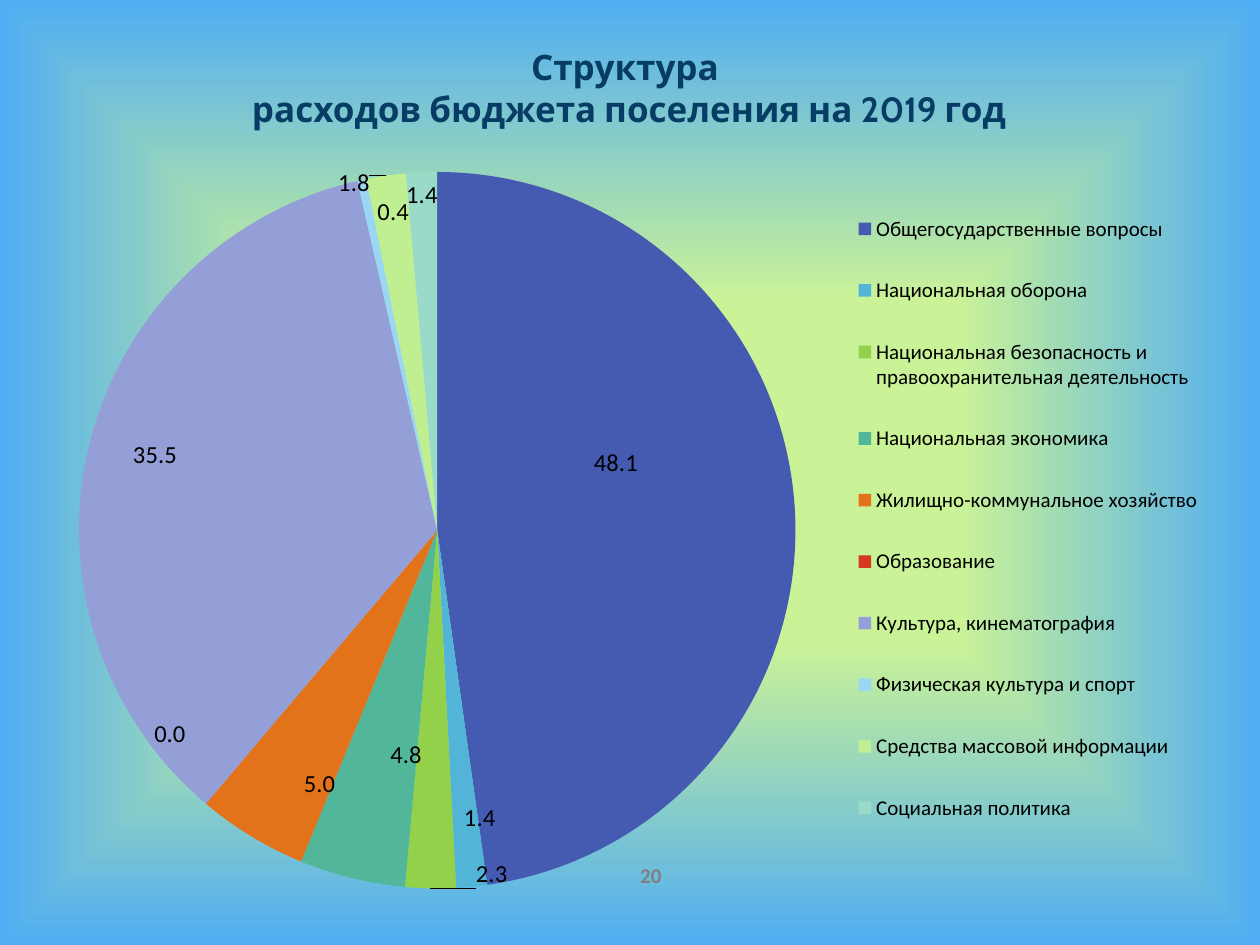
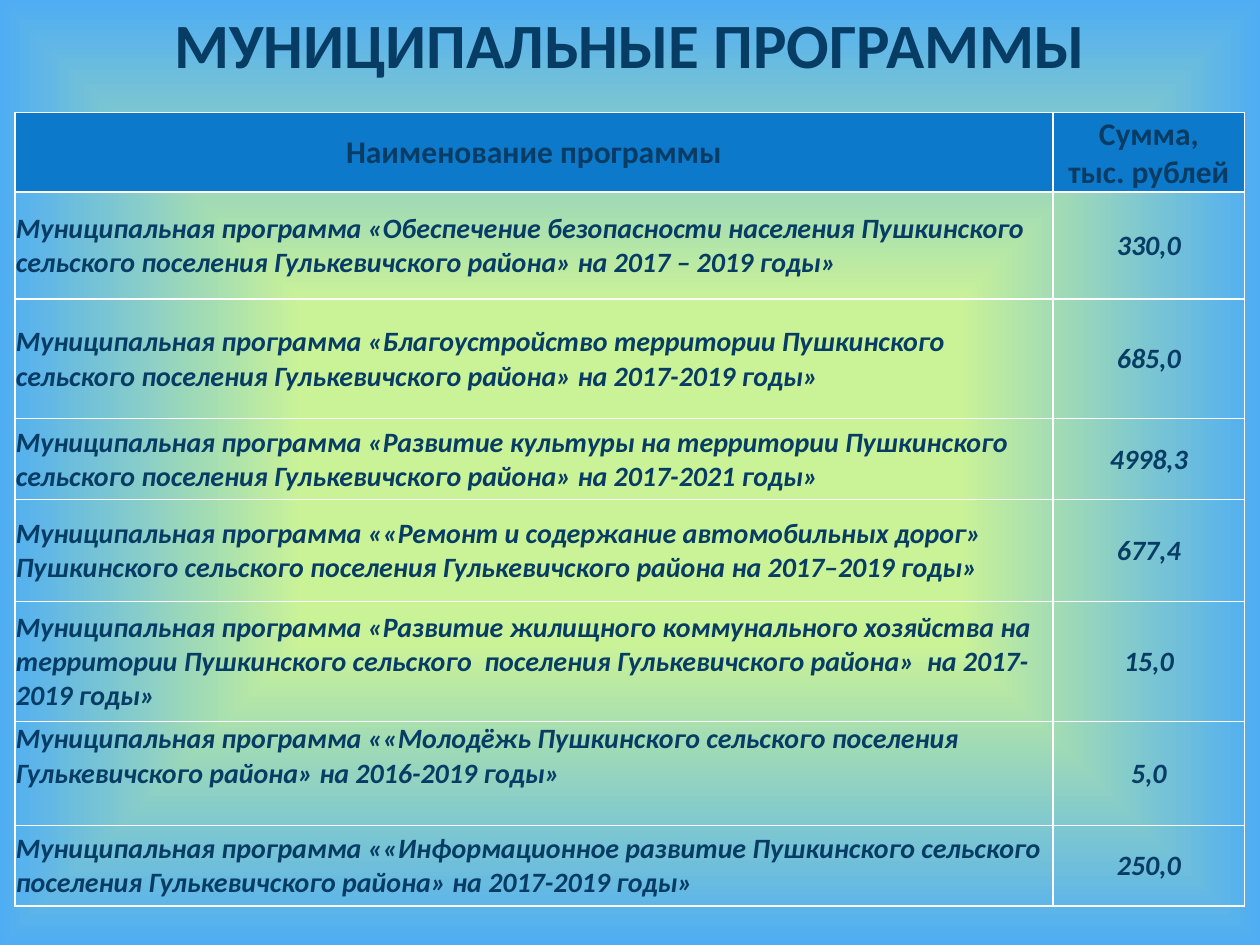
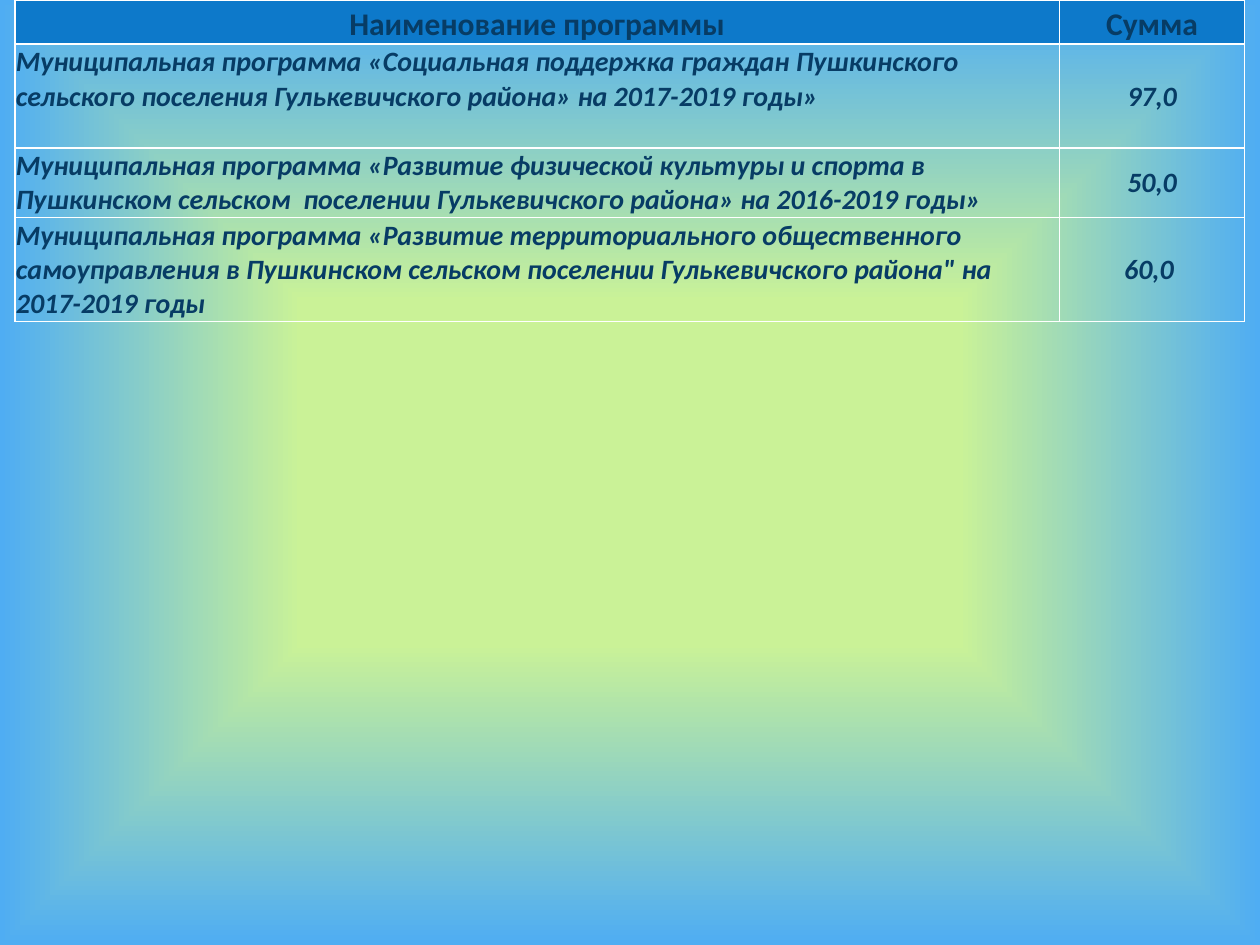
import pptx
import pptx.chart.data
import pptx.dml.color
import pptx.enum.chart
import pptx.enum.text
import pptx.oxml
import pptx.oxml.ns
import pptx.util
from lxml import etree

Cm = pptx.util.Cm
Pt = pptx.util.Pt
RGBColor = pptx.dml.color.RGBColor
ALIGN = pptx.enum.text.PP_ALIGN
ANCHOR = pptx.enum.text.MSO_ANCHOR
LABEL = pptx.enum.chart.XL_LABEL_POSITION

NAVY = RGBColor(0x07, 0x3C, 0x65)
HEADER_BLUE = RGBColor(0x0D, 0x79, 0xCA)
GREY = RGBColor(0x80, 0x80, 0x80)
BLACK = RGBColor(0, 0, 0)
LIME, SKY, WHITE = (RGBColor(0xCA, 0xF2, 0x97), RGBColor(0x4F, 0xAD, 0xF3),
                    RGBColor(0xFF, 0xFF, 0xFF))
BODY_FONT = "Calibri"
TITLE_FONT = "Cabin"
NS = pptx.oxml.ns.nsdecls("a")

GRADIENT = f"""<a:gradFill {NS} rotWithShape="1"><a:gsLst>
<a:gs pos="36000"><a:srgbClr val="{LIME}"/></a:gs>
<a:gs pos="100000"><a:srgbClr val="{SKY}"/></a:gs></a:gsLst>
<a:path path="shape"><a:fillToRect l="50000" t="50000" r="50000" b="50000"/></a:path>
</a:gradFill>"""


def write(frame, lines, size, color=NAVY, font=BODY_FONT, align=ALIGN.CENTER,
          bold=True, italic=False):
    """Fill a text frame, one paragraph per line."""
    for number, line in enumerate(lines):
        paragraph = frame.add_paragraph() if number else frame.paragraphs[0]
        paragraph.alignment = align
        run = paragraph.add_run()
        run.text = line
        run.font.size = Pt(size)
        run.font.name = font
        run.font.bold = bold
        run.font.italic = italic
        run.font.color.rgb = color


def add_programs(slide, top, widths, heights, header, programs, anchors):
    """Table of programmes; anchors maps (row, column) to a special anchor."""
    table = slide.shapes.add_table(len(heights), 2, Cm(0.3), Cm(top),
                                   Cm(sum(widths)), Cm(sum(heights))).table
    table.horz_banding = False
    for column, width in zip(table.columns, widths):
        column.width = Cm(width)
    for row, height in zip(table.rows, heights):
        row.height = Cm(height)
    for r, texts in enumerate([header] + programs):
        for c, text in enumerate(texts):
            cell = table.cell(r, c)
            inset = Cm(0.02) if r else 0
            cell.margin_left = cell.margin_right = cell.margin_top = inset
            cell.margin_bottom = 0
            cell.vertical_anchor = anchors.get((r, c), ANCHOR.MIDDLE)
            properties = cell._tc.get_or_add_tcPr()
            for side in ("lnL", "lnR", "lnT", "lnB"):
                properties.append(pptx.oxml.parse_xml(
                    f'<a:{side} {NS} w="12700"><a:solidFill>'
                    f'<a:srgbClr val="{WHITE}"/></a:solidFill></a:{side}>'))
            if r == 0:
                cell.fill.solid()
                cell.fill.fore_color.rgb = HEADER_BLUE
                write(cell.text_frame, text.split("\n"), 18)
            else:
                cell.fill.background()
                write(cell.text_frame, [text], 16, italic=True,
                      align=ALIGN.CENTER if c else ALIGN.LEFT)


# Presentation and shared background
prs = pptx.Presentation()
prs.slide_width, prs.slide_height = Cm(25.4), Cm(19.05)
master = prs.slide_master
master.background.fill.solid()
solid = master.element.xpath("p:cSld/p:bg/p:bgPr/a:solidFill")[0]
solid.getparent().replace(solid, pptx.oxml.parse_xml(GRADIENT))
title_only, blank = prs.slide_layouts[5], prs.slide_layouts[6]

# Slide 1: structure of spending
structure = prs.slides.add_slide(title_only)
heading = structure.shapes.title
heading.left, heading.top, heading.width, heading.height = Cm(-0.1), Cm(0.78), Cm(25.4), Cm(1.95)
heading.text_frame.vertical_anchor = ANCHOR.TOP
heading.text_frame.auto_size = pptx.enum.text.MSO_AUTO_SIZE.NONE
write(heading.text_frame, ["Структура", " расходов бюджета поселения на 2019 год"],
      20, font=TITLE_FONT)

page_number = structure.shapes.add_textbox(Cm(10.58), Cm(17.13), Cm(5.08), Cm(1.02)).text_frame
page_number.word_wrap = True
page_number.vertical_anchor = ANCHOR.MIDDLE
write(page_number, ["20"], 12, color=GREY)

# Section, share, slice colour, shift of the label as shares of the chart area
spending = [
    ("Общегосударственные вопросы", 48.1, "455BB1", (0, -0.07)),
    ("Национальная оборона", 1.4, "52B4D6", (0.02, -0.06)),
    ("Национальная безопасность и правоохранительная деятельность", 2.3, "93D14A", (0.05, 0.01)),
    ("Национальная экономика", 4.8, "52B79A", (0.03, -0.13)),
    ("Жилищно-коммунальное хозяйство", 5, "E2731B", (0.04, -0.04)),
    ("Образование", 0, "D63820", (0, 0)),
    ("Культура, кинематография", 35.5, "949ED7", (0.03, -0.01)),
    ("Физическая культура и спорт", 0.4, "99D7F5", (0.04, 0.07)),
    ("Средства массовой информации", 1.8, "C0EF92", (-0.04, -0.02)),
    ("Социальная политика", 1.4, "99DBC8", (0, 0)),
]
shares = pptx.chart.data.CategoryChartData(number_format="0.0")
shares.categories = [section for section, *_ in spending]
shares.add_series("Series 1", [share for _, share, *_ in spending])
pie = structure.shapes.add_chart(pptx.enum.chart.XL_CHART_TYPE.PIE, Cm(0.3), Cm(2.84),
                                 Cm(24.61), Cm(15.7), shares).chart
pie.has_title = False
pie.font.size = Pt(10)
pie.font.name = BODY_FONT
pie.font.color.rgb = BLACK
pie.has_legend = True
pie.legend.position = pptx.enum.chart.XL_LEGEND_POSITION.RIGHT
pie.legend.include_in_layout = False
pie.legend.font.size = Pt(12)
pie.legend.font.name = BODY_FONT
pie.legend.font.color.rgb = BLACK

pie.plots[0].vary_by_categories = True
slices = pie.plots[0].series[0]
labels = slices.data_labels
labels.show_value = True
labels.number_format = "0.0"
labels.number_format_is_linked = False
labels.position = LABEL.INSIDE_END
labels.font.size = Pt(14)
labels.font.color.rgb = BLACK
special_positions = {0: LABEL.CENTER, 7: LABEL.OUTSIDE_END}
C = pptx.oxml.ns.qn("c:layout")[:-len("layout")]
for index, (section, share, color, shift) in enumerate(spending):
    slice_fill = slices.points[index].format.fill
    slice_fill.solid()
    slice_fill.fore_color.rgb = RGBColor.from_string(color)
    if shift == (0, 0):
        continue
    label = slices.points[index].data_label
    label.font.size = Pt(14)
    label.font.color.rgb = BLACK
    label.position = special_positions.get(index, LABEL.INSIDE_END)
    layout = etree.Element(C + "layout")
    manual = etree.SubElement(layout, C + "manualLayout")
    for name, value in zip("xy", shift):
        etree.SubElement(manual, C + name, val=str(value))
    number = etree.Element(C + "numFmt", formatCode="0.0", sourceLinked="0")
    place = labels._element.xpath(f"c:dLbl/c:idx[@val='{index}']")[0]
    place.addnext(number)
    place.addnext(layout)

# Fixed places of the pie and its legend, as shares of the chart area
for tag, box in (("plotArea", (0.016, 0.04, 0.66, 0.92)), ("legend", (0.68, 0.05, 0.3, 0.87))):
    part = pie.element.xpath(f"c:chart/c:{tag}")[0]
    for old in part.findall(C + "layout"):
        part.remove(old)
    layout = etree.Element(C + "layout")
    manual = etree.SubElement(layout, C + "manualLayout")
    if tag == "plotArea":
        etree.SubElement(manual, C + "layoutTarget", val="inner")
        part.insert(0, layout)
    else:
        part.find(C + "legendPos").addnext(layout)
    for mode in ("xMode", "yMode"):
        etree.SubElement(manual, C + mode, val="edge")
    for name, value in zip("xywh", box):
        etree.SubElement(manual, C + name, val=str(value))

# Value of the empty slice
education_share = structure.shapes.add_textbox(Cm(2.6), Cm(14.3), Cm(1.65), Cm(0.95)).text_frame
education_share.word_wrap = True
education_share.vertical_anchor = ANCHOR.MIDDLE
write(education_share, ["0.0"], 14, color=BLACK, bold=False)

# Slide 2: municipal programmes
programs = prs.slides.add_slide(title_only)
heading = programs.shapes.title
heading.left, heading.top, heading.width, heading.height = Cm(0.9), 0, Cm(23.6), Cm(1.75)
heading.text_frame.auto_size = pptx.enum.text.MSO_AUTO_SIZE.NONE
write(heading.text_frame, ["МУНИЦИПАЛЬНЫЕ ПРОГРАММЫ"], 36)
add_programs(
    programs, 2.27, (20.93, 3.86), (1.6, 2.16, 2.41, 1.63, 2.06, 2.41, 2.1, 1.62),
    ("Наименование программы", "Сумма,\nтыс. рублей"),
    [("Муниципальная программа «Обеспечение безопасности населения Пушкинского сельского "
      "поселения Гулькевичского района» на 2017 – 2019 годы»", "330,0"),
     ("Муниципальная программа «Благоустройство территории Пушкинского сельского "
      "поселения Гулькевичского района» на 2017-2019 годы»", "685,0"),
     ("Муниципальная программа «Развитие культуры на территории Пушкинского сельского "
      "поселения Гулькевичского района» на 2017-2021 годы»", "4998,3"),
     ("Муниципальная программа ««Ремонт и содержание автомобильных дорог» Пушкинского "
      "сельского поселения Гулькевичского района на 2017–2019 годы»", "677,4"),
     ("Муниципальная программа «Развитие жилищного коммунального хозяйства на территории "
      "Пушкинского сельского  поселения Гулькевичского района»  на 2017-2019 годы»", "15,0"),
     ("Муниципальная программа ««Молодёжь Пушкинского сельского поселения "
      "Гулькевичского района» на 2016-2019 годы»", "5,0"),
     ("Муниципальная программа ««Информационное развитие Пушкинского сельского "
      "поселения Гулькевичского района» на 2017-2019 годы»", "250,0")],
    {(0, 1): ANCHOR.BOTTOM, (6, 0): ANCHOR.TOP})

# Slide 3: municipal programmes, continued
continued = prs.slides.add_slide(blank)
add_programs(
    continued, 0, (21.06, 3.73), (0.89, 2.09, 1.39, 2.1),
    ("Наименование программы", "Сумма"),
    [("Муниципальная программа «Социальная поддержка граждан Пушкинского сельского "
      "поселения Гулькевичского района» на 2017-2019 годы»", "97,0"),
     ("Муниципальная программа «Развитие физической культуры и спорта в Пушкинском "
      "сельском  поселении Гулькевичского района» на 2016-2019 годы»", "50,0"),
     ("Муниципальная программа «Развитие территориального общественного самоуправления в "
      "Пушкинском сельском поселении Гулькевичского района\" на 2017-2019 годы", "60,0 ")],
    {(0, 0): ANCHOR.BOTTOM, (0, 1): ANCHOR.BOTTOM, (1, 0): ANCHOR.TOP})

prs.save("out.pptx")
